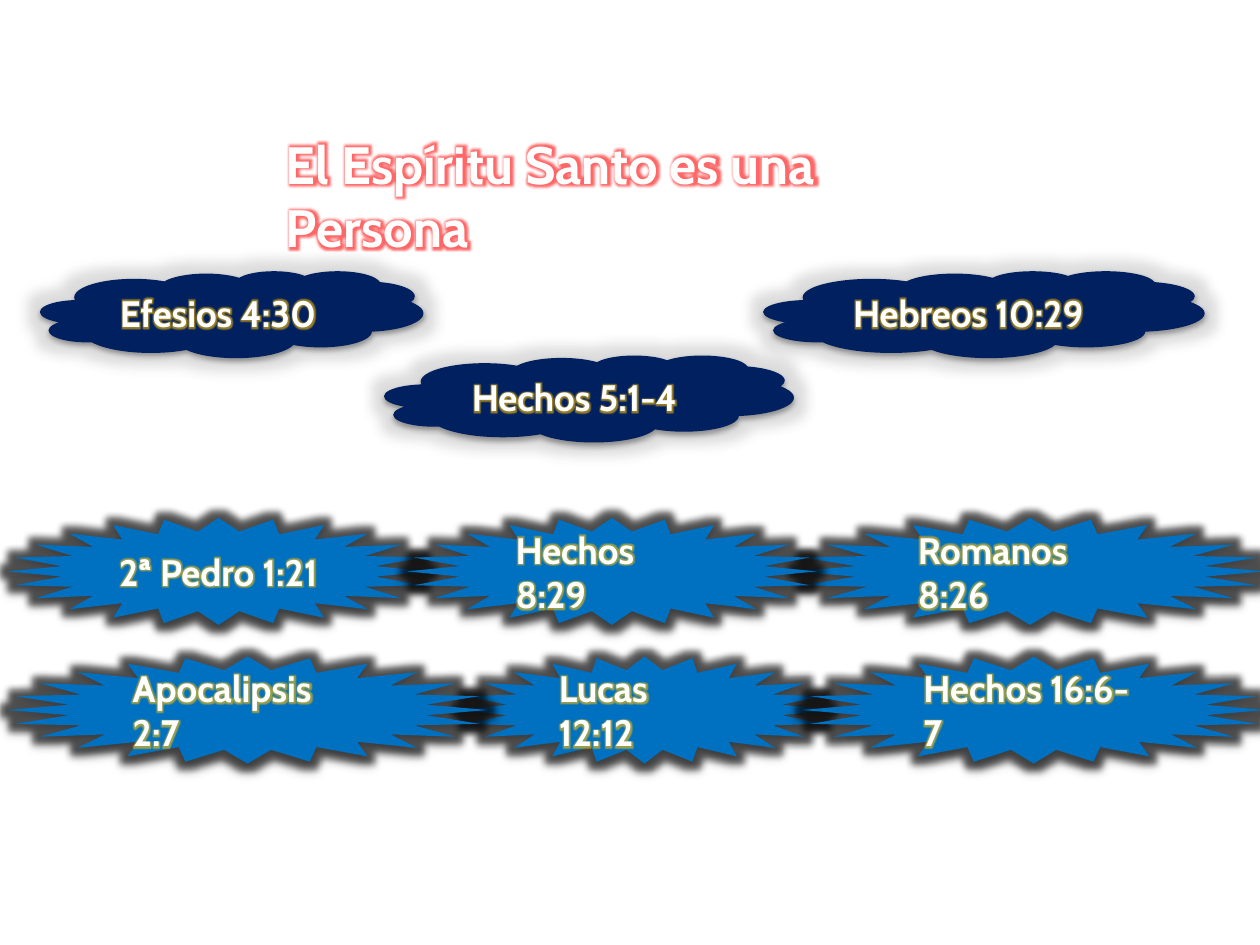
from lxml.etree import SubElement
from pptx import Presentation
from pptx.dml.color import RGBColor
from pptx.enum.shapes import MSO_SHAPE
from pptx.enum.text import MSO_ANCHOR, MSO_AUTO_SIZE, PP_ALIGN
from pptx.oxml.ns import qn
from pptx.util import Pt


def rgb(value):
    return RGBColor.from_string(value)


class SlideBuilder:
    font = "Cabin"
    text_color = "FFFFFF"

    def __init__(self, slide):
        self.s = slide

    def effect(self, parent, kind, color, alpha, **attrs):
        el = SubElement(parent, qn(f"a:{kind}"), {k: str(v) for k, v in attrs.items()})
        clr = SubElement(el, qn("a:srgbClr"), val=color)
        SubElement(clr, qn("a:alpha"), val=str(alpha * 1000))

    def label(self, sp, text, size, glow, align, wrap):
        tf = sp.text_frame
        tf.text = text
        tf.word_wrap = wrap
        tf.auto_size = MSO_AUTO_SIZE.NONE
        tf.vertical_anchor = MSO_ANCHOR.MIDDLE
        p = tf.paragraphs[0]
        p.alignment = align
        p.line_spacing = 1.0
        r = p.runs[0]
        r.font.size = Pt(size)
        r.font.bold = True
        r.font.color.rgb = rgb(self.text_color)
        effects = SubElement(r.font._element, qn("a:effectLst"))
        self.effect(effects, "glow", *glow, rad=Pt(5))
        r.font.name = self.font

    def title(self, text, x, y, w, h):
        sp = self.s.shapes.title
        sp.left, sp.top, sp.width, sp.height = Pt(x), Pt(y), Pt(w), Pt(h)
        self.label(sp, text, 30, ("FF0000", 60), PP_ALIGN.LEFT, True)

    def badge(self, kind, text, x, y, w, h, fill, glow, radius, align, wrap):
        sp = self.s.shapes.add_shape(kind, Pt(x), Pt(y), Pt(w), Pt(h))
        sp.fill.solid()
        sp.fill.fore_color.rgb = rgb(fill)
        sp.line.fill.background()
        sp.shadow.inherit = False
        effects = sp._element.spPr.find(qn("a:effectLst"))
        self.effect(effects, "glow", *glow, rad=Pt(radius))
        self.effect(effects, "outerShdw", "000000", 40, blurRad=Pt(3.5),
                    dist=Pt(1.7), dir=5400000, rotWithShape=0)
        self.label(sp, text, 21, ("FFC000", 60), align, wrap)

    def cloud(self, text, x, y, w):
        self.badge(MSO_SHAPE.CLOUD, text, x, y, w, 49.7, "002060", ("000000", 10), 14,
                   PP_ALIGN.CENTER, False)

    def star(self, text, x, y, w):
        self.badge(MSO_SHAPE.STAR_24_POINT, text, x, y, w, 61.2, "0070C0", ("000000", 60), 8,
                   PP_ALIGN.LEFT, True)


def main():
    prs = Presentation()
    prs.slide_width, prs.slide_height = Pt(720), Pt(540)
    b = SlideBuilder(prs.slides.add_slide(prs.slide_layouts[5]))

    b.title("El Espíritu Santo es una Persona", 156.2, 89.3, 415.4, 43.9)

    clouds = [
        ("Efesios 4:30", 23, 154.8, 218.9),
        ("Hechos 5:1-4", 219.6, 203, 234),
        ("Hebreos 10:29", 436.3, 154.8, 252),
    ]
    for text, x, y, w in clouds:
        b.cloud(text, x, y, w)

    star_rows = {
        295.9: [("2ª Pedro 1:21", 4.3, 241.2), ("Romanos 8:26", 454.3, 268.6),
                ("Hechos 8:29", 232.6, 234)],
        375.1: [("Lucas 12:12", 262.8, 211), ("Apocalipsis 2:7", 4.3, 274.3),
                ("Hechos 16:6-7", 458.6, 264.2)],
    }
    for y, row in star_rows.items():
        for text, x, w in row:
            b.star(text, x, y, w)

    prs.save("out.pptx")


if __name__ == "__main__":
    main()
